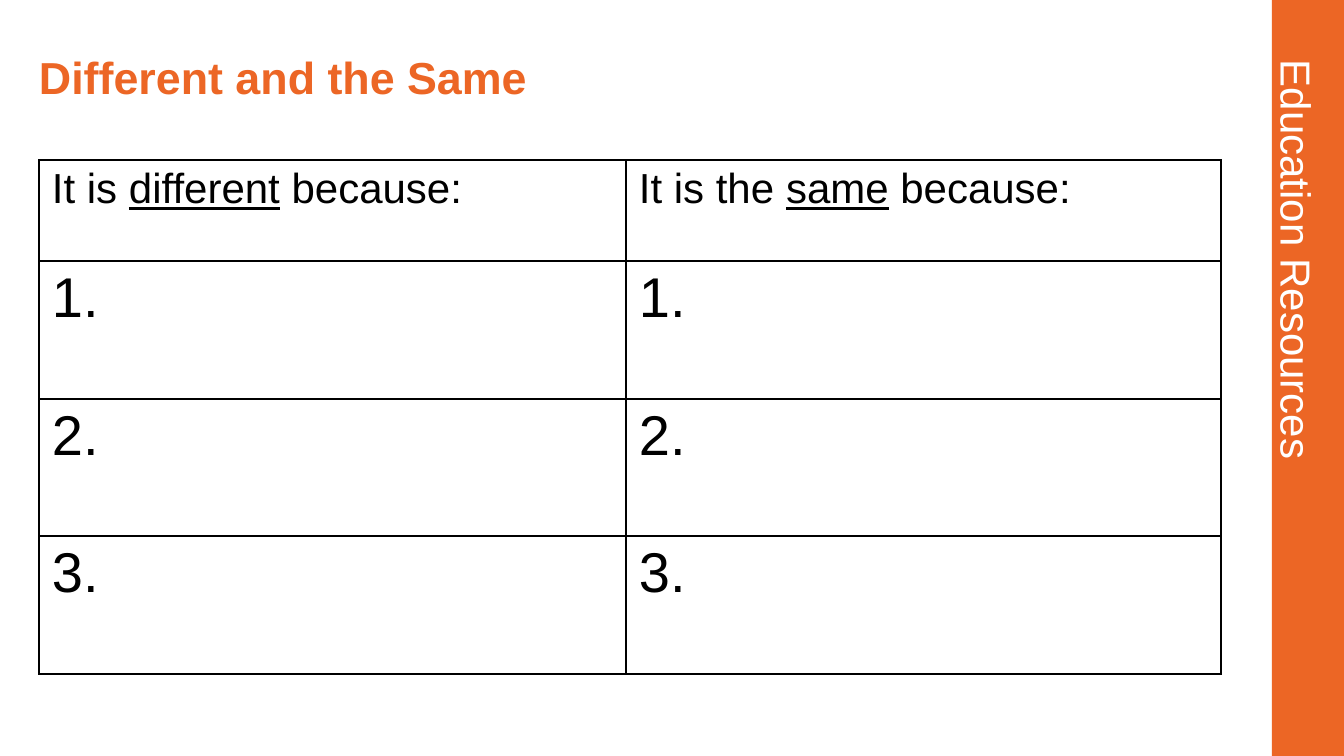
"""Build the "Different and the Same" comparison slide."""
from dataclasses import dataclass

from lxml import etree
from pptx import Presentation
from pptx.dml.color import RGBColor
from pptx.enum.shapes import MSO_SHAPE
from pptx.enum.text import MSO_ANCHOR, MSO_AUTO_SIZE, PP_ALIGN
from pptx.oxml.ns import qn
from pptx.slide import Slide
from pptx.table import _Cell
from pptx.text.text import TextFrame, _Paragraph
from pptx.util import Emu, Pt

RECTANGLE = MSO_SHAPE.RECTANGLE
MIDDLE, TOP = MSO_ANCHOR.MIDDLE, MSO_ANCHOR.TOP
CENTER, LEFT = PP_ALIGN.CENTER, PP_ALIGN.LEFT
GROW, FIXED = MSO_AUTO_SIZE.SHAPE_TO_FIT_TEXT, MSO_AUTO_SIZE.NONE

PX_PER_INCH = 100.8
ORANGE, WHITE, BLACK = "EC6625", "FFFFFF", "000000"
FONT = "Arial"
COLUMN_WIDTHS = (587, 595)
ROW_HEIGHTS = (101, 138, 137, 138)
BORDER_SIDES = ("a:lnL", "a:lnR", "a:lnT", "a:lnB")


@dataclass(frozen=True)
class Label:
    """A text box with one line of text."""
    text: str
    left: int
    top: int
    width: int
    height: int
    size: int
    color: str
    bold: bool
    align: PP_ALIGN
    anchor: MSO_ANCHOR
    autosize: MSO_AUTO_SIZE
    insets: tuple[int, int, int, int]
    spacing: float | Pt
    rotation: int


@dataclass(frozen=True)
class Heading:
    """A column heading with one underlined word."""
    before: str
    underlined: str
    after: str


LABELS = (
    Label("Education Resources", 1116, 223, 404, 73, 30, WHITE, False,
          CENTER, TOP, GROW, (0, 0, 0, 0), Pt(58.8), 90),
    Label("Different and the Same", 39, 40, 1213, 79, 32, ORANGE, True,
          LEFT, MIDDLE, FIXED, (0, 5, 10, 5), 0.9, 0),
)
HEADINGS = (
    Heading("It is ", "different", " because:"),
    Heading("It is the ", "same", " because:"),
)


def px(length: int) -> Emu:
    """Turn a length in px into EMU."""
    return Emu(round(length * 914400 / PX_PER_INCH))


def rgb(color: str) -> RGBColor:
    """Turn a hex string into a colour."""
    return RGBColor.from_string(color)


def set_font(para: _Paragraph, size: int, color: str, bold: bool = False) -> None:
    """Set the font shared by all runs of a paragraph."""
    para.font.name = FONT
    para.font.size = Pt(size)
    para.font.bold = bold
    para.font.color.rgb = rgb(color)


def set_insets(target: TextFrame | _Cell, insets: tuple[int, int, int, int]) -> None:
    """Set the left, top, right and bottom insets."""
    (target.margin_left, target.margin_top,
     target.margin_right, target.margin_bottom) = map(px, insets)


def add_bar(page: Slide) -> None:
    """Draw the orange bar on the right edge."""
    bar = page.shapes.add_shape(RECTANGLE, px(1272), px(0), px(72), px(756))
    bar.shadow.inherit = False
    bar.fill.solid()
    bar.fill.fore_color.rgb = rgb(ORANGE)
    bar.line.fill.background()


def add_label(page: Slide, label: Label) -> None:
    """Draw one text box."""
    box = page.shapes.add_textbox(
        px(label.left), px(label.top), px(label.width), px(label.height))
    box.rotation = label.rotation
    frame = box.text_frame
    frame.word_wrap = True
    frame.auto_size = label.autosize
    frame.vertical_anchor = label.anchor
    set_insets(frame, label.insets)
    para = frame.paragraphs[0]
    para.text = label.text
    para.alignment = label.align
    para.line_spacing = label.spacing
    set_font(para, label.size, label.color, label.bold)


def style_cell(cell: _Cell) -> None:
    """Give a cell its insets, thin black borders and no fill."""
    set_insets(cell, (13, 6, 13, 6))
    properties = cell._tc.get_or_add_tcPr()
    for side in BORDER_SIDES:
        line = etree.SubElement(properties, qn(side), w=str(Pt(1)))
        fill = etree.SubElement(line, qn("a:solidFill"))
        etree.SubElement(fill, qn("a:srgbClr"), val=BLACK)
    cell.fill.background()


def add_comparison(page: Slide) -> None:
    """Draw the table of differences and similarities."""
    table = page.shapes.add_table(
        len(ROW_HEIGHTS), len(COLUMN_WIDTHS), px(39), px(160),
        px(sum(COLUMN_WIDTHS)), px(sum(ROW_HEIGHTS))).table
    table.first_row = table.horz_banding = False
    for column, width in zip(table.columns, COLUMN_WIDTHS):
        column.width = px(width)
    for number, height in enumerate(ROW_HEIGHTS):
        table.rows[number].height = px(height)
        for index, heading in enumerate(HEADINGS):
            cell = table.cell(number, index)
            style_cell(cell)
            para = cell.text_frame.paragraphs[0]
            if number:
                para.text = f"{number}."
                set_font(para, 40, BLACK)
                continue
            for text in (heading.before, heading.underlined, heading.after):
                span = para.add_run()
                span.text = text
                span.font.underline = text == heading.underlined
            set_font(para, 30, BLACK)


def main() -> None:
    """Build and save the deck."""
    deck = Presentation()
    deck.slide_width, deck.slide_height = px(1344), px(756)
    page = deck.slides.add_slide(deck.slide_layouts[6])
    add_bar(page)
    for label in LABELS:
        add_label(page, label)
    add_comparison(page)
    deck.save("out.pptx")


if __name__ == "__main__":
    main()
